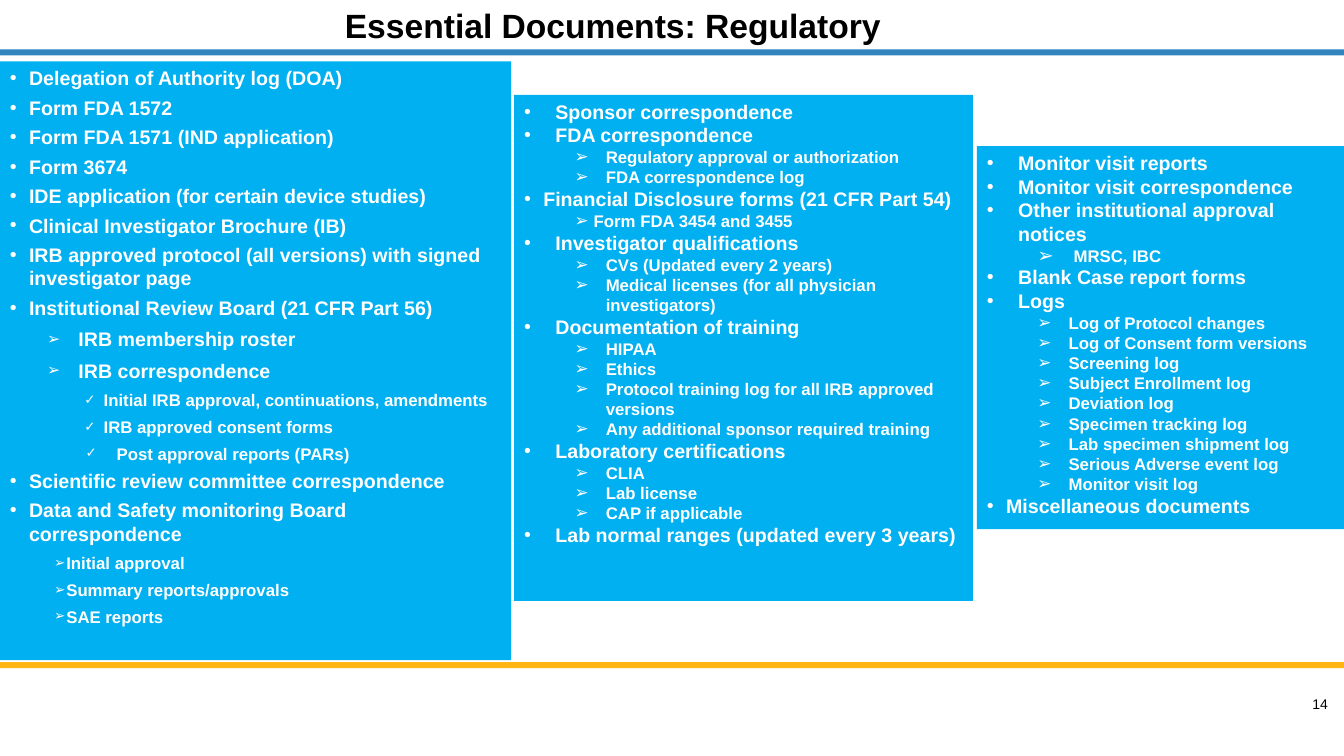
from dataclasses import dataclass

from lxml import etree
from pptx import Presentation
from pptx.dml.color import RGBColor
from pptx.enum.shapes import MSO_SHAPE
from pptx.enum.text import MSO_ANCHOR, MSO_AUTO_SIZE, PP_ALIGN
from pptx.oxml.ns import qn
from pptx.util import Pt

RECT = MSO_SHAPE.RECTANGLE
LEFT, RIGHT = PP_ALIGN.LEFT, PP_ALIGN.RIGHT
TOP, MIDDLE = MSO_ANCHOR.TOP, MSO_ANCHOR.MIDDLE
FIXED = MSO_AUTO_SIZE.NONE
FONT = "Arial"
WHITE, BLACK, SKY, BLUE, GOLD = "FFFFFF", "000000", "00B0F0", "3284BE", "FFB612"
WIDE, HIGH = 1333, 750


@dataclass(frozen=True)
class Box:
    x: int
    y: int
    w: int
    h: int


@dataclass(frozen=True)
class Style:
    left: int
    hang: int
    mark: str
    size: int
    level: int = 0
    scale: int = 100
    before: int = 0
    after: int = 0


@dataclass(frozen=True)
class Group:
    style: Style
    lines: tuple[str, ...]


@dataclass(frozen=True)
class Panel:
    box: Box
    groups: tuple[Group, ...]


def px(n: int) -> int:
    """One px is a hundredth of an inch."""
    return n * 9144


def tint(code: str) -> RGBColor:
    return RGBColor.from_string(code)


def place(shape, box: Box) -> None:
    shape.left, shape.top = px(box.x), px(box.y)
    shape.width, shape.height = px(box.w), px(box.h)


def write(para, text: str, size: int, color: str, bold: bool) -> None:
    run = para.add_run()
    run.text = text
    font = run.font
    font.name, font.size, font.bold = FONT, Pt(size), bold
    font.color.rgb = tint(color)


def block(slide, box: Box, color: str):
    shape = slide.shapes.add_shape(RECT, px(box.x), px(box.y), px(box.w), px(box.h))
    shape.shadow.inherit = False
    shape.fill.solid()
    shape.fill.fore_color.rgb = tint(color)
    shape.line.fill.background()
    return shape


def dress(para, style: Style) -> None:
    """Set indent, percent spacing and bullet."""
    para.alignment, para.level = LEFT, style.level
    props = para._p.get_or_add_pPr()
    props.set("marL", str(px(style.left)))
    props.set("indent", str(px(-style.hang)))
    for tag, share in (("a:spcBef", style.before), ("a:spcAft", style.after)):
        gap = etree.SubElement(props, qn(tag))
        etree.SubElement(gap, qn("a:spcPct"), val=str(share * 1000))
    etree.SubElement(props, qn("a:buSzPct"), val=str(style.scale * 1000))
    etree.SubElement(props, qn("a:buFont"), typeface=FONT)
    etree.SubElement(props, qn("a:buChar"), char=style.mark)


def fill(slide, panel: Panel) -> None:
    frame = block(slide, panel.box, SKY).text_frame
    frame.word_wrap, frame.vertical_anchor = True, TOP
    rows = [(group.style, line) for group in panel.groups for line in group.lines]
    for n, (style, line) in enumerate(rows):
        para = frame.add_paragraph() if n else frame.paragraphs[0]
        dress(para, style)
        write(para, line, style.size, WHITE, True)


def group(style: Style, *lines: str) -> Group:
    return Group(style, lines)


# Styles of the spaced list
ITEM = Style(19, 19, "•", 14, after=30)
BOARD = Style(68, 31, "➢", 14, 1, 80, 10, 30)
CHECK = Style(93, 19, "✓", 12, 2, 80, 10, 30)
POST = Style(106, 31, "✓", 12, 2, 80, 10, 30)
SAFE = Style(56, 12, "➢", 12, 1, 80, 10, 30)

# Styles of the tight lists
HEAD = Style(31, 31, "•", 14)
NEAR = Style(19, 19, "•", 14)
SUB = Style(81, 31, "➢", 12, 1)
FORM = Style(69, 19, "➢", 12, 1)
LARGE = Style(86, 36, "➢", 12, 1, 117)

PANELS = (
    Panel(Box(0, 61, 507, 594), (
        group(ITEM, "Delegation of Authority log (DOA)", "Form FDA 1572",
              "Form FDA 1571 (IND application)", "Form 3674",
              "IDE application (for certain device studies)",
              "Clinical Investigator Brochure (IB)",
              "IRB approved protocol (all versions) with signed investigator page",
              "Institutional Review Board (21 CFR Part 56)"),
        group(BOARD, "IRB membership roster", "IRB correspondence"),
        group(CHECK, "Initial IRB approval, continuations, amendments",
              "IRB approved consent forms"),
        group(POST, "Post approval reports (PARs)"),
        group(ITEM, "Scientific review committee correspondence",
              "Data and Safety monitoring Board correspondence"),
        group(SAFE, "Initial approval", "Summary reports/approvals", "SAE reports"),
    )),
    Panel(Box(510, 94, 455, 502), (
        group(HEAD, "Sponsor correspondence", "FDA correspondence"),
        group(SUB, "Regulatory approval or authorization", "FDA correspondence log"),
        group(NEAR, "Financial Disclosure forms (21 CFR Part 54)"),
        group(FORM, "Form FDA 3454 and 3455"),
        group(HEAD, "Investigator qualifications"),
        group(SUB, "CVs (Updated every 2 years)",
              "Medical licenses (for all physician investigators)"),
        group(HEAD, "Documentation of training"),
        group(SUB, "HIPAA", "Ethics",
              "Protocol training log for all IRB approved versions",
              "Any additional sponsor required training"),
        group(HEAD, "Laboratory certifications"),
        group(SUB, "CLIA", "Lab license", "CAP if applicable"),
        group(HEAD, "Lab normal ranges (updated every 3 years)"),
    )),
    Panel(Box(969, 145, 364, 380), (
        group(HEAD, "Monitor visit reports", "Monitor visit correspondence",
              "Other institutional approval notices"),
        group(LARGE, "MRSC, IBC"),
        group(HEAD, "Blank Case report forms", "Logs"),
        group(SUB, "Log of Protocol changes", "Log of Consent form versions",
              "Screening log", "Subject Enrollment log", "Deviation log",
              "Specimen tracking log", "Lab specimen shipment log",
              "Serious Adverse event log", "Monitor visit log"),
        group(NEAR, "Miscellaneous documents"),
    )),
)


def main() -> None:
    deck = Presentation()
    deck.slide_width, deck.slide_height = px(WIDE), px(HIGH)
    slide = deck.slides.add_slide(deck.slide_layouts[5])

    # Title
    title = slide.shapes.title
    place(title, Box(332, 0, 557, 50))
    frame = title.text_frame
    frame.auto_size, frame.word_wrap, frame.vertical_anchor = FIXED, False, TOP
    frame.paragraphs[0].alignment = LEFT
    write(frame.paragraphs[0], "Essential Documents: Regulatory", 24, BLACK, True)

    # Bars
    for top, color in ((657, GOLD), (49, BLUE)):
        block(slide, Box(0, top, WIDE, 6), color)

    # Page number
    page = slide.shapes.add_textbox(px(1050), px(682), px(267), px(32)).text_frame
    page.margin_left = page.margin_right = page.margin_top = page.margin_bottom = 0
    page.word_wrap, page.vertical_anchor = True, MIDDLE
    page.paragraphs[0].alignment = RIGHT
    write(page.paragraphs[0], "14", 10, BLACK, False)

    # Lists
    for panel in PANELS:
        fill(slide, panel)

    deck.save("out.pptx")


if __name__ == "__main__":
    main()
